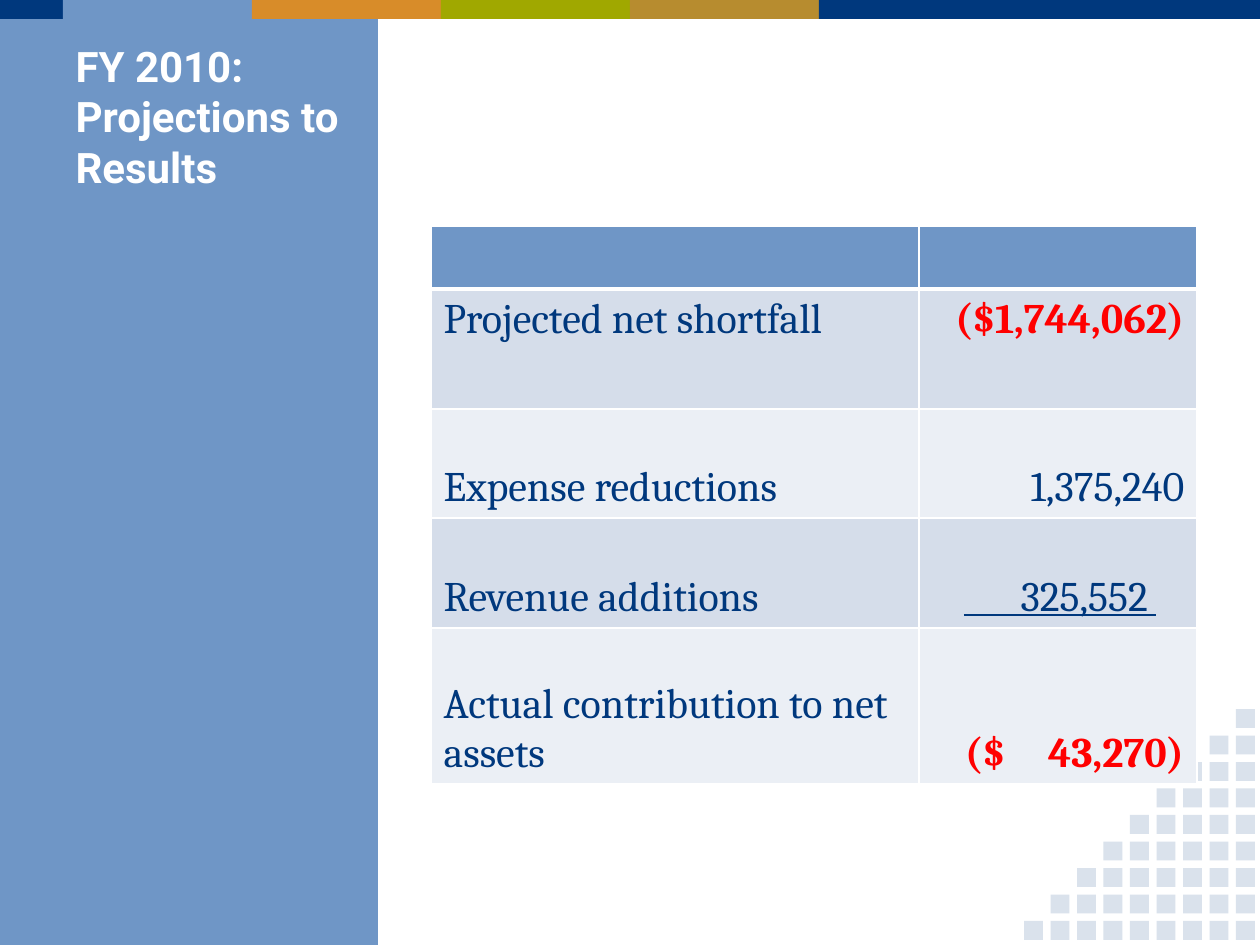
from itertools import accumulate

from lxml import etree
from pptx import Presentation
from pptx import util as u
from pptx.dml.color import RGBColor
from pptx.enum import shapes, text
from pptx.oxml.ns import qn

PX = u.Inches(1) / 126
COLORS = {
    "navy": "00387D", "blue": "6F96C6", "orange": "D88C29", "green": "A0A800",
    "gold": "B78C2F", "square": "DAE2EC", "band": "D5DDEA", "pale": "EBEFF5",
    "red": "FF0000", "white": "FFFFFF",
}
LEFT, RIGHT = text.PP_ALIGN.LEFT, text.PP_ALIGN.RIGHT
TOP, BOTTOM = text.MSO_ANCHOR.TOP, text.MSO_ANCHOR.BOTTOM


def px(length):
    """Turn px into EMU."""
    return u.Emu(round(length * PX))


def color(name):
    """Return the named colour."""
    return RGBColor.from_string(COLORS[name])


def add_rect(parent, box, fill):
    """Add a plain filled rectangle."""
    rect = parent.add_shape(shapes.MSO_SHAPE.RECTANGLE, *map(px, box))
    rect.shadow.inherit = False
    rect.fill.solid()
    rect.fill.fore_color.rgb = color(fill)
    rect.line.fill.background()


def write(frame, words, font="Cambria", ink="navy", bold=False, align=LEFT):
    """Write one formatted paragraph into a text frame."""
    para = frame.paragraphs[0]
    para.alignment = align
    span = para.add_run()
    span.text = words
    span.font.name = font
    span.font.size = u.Pt(24)
    span.font.bold = bold
    span.font.color.rgb = color(ink)
    return para


def add_squares(slide, box, count=9, size=19):
    """Fill the lower right half of a box with a grid of squares."""
    left, top, width, height = box
    group = slide.shapes.add_group_shape()
    for row in range(count):
        for column in range(count - 1 - row, count):
            x = left + column * (width - size) / (count - 1)
            y = top + row * (height - size) / (count - 1)
            add_rect(group.shapes, (x, y, size, size), "square")


def add_top_bar(slide, box):
    """Add the strip of coloured segments."""
    left, top, _, height = box
    segments = [("navy", 63), ("blue", 189), ("orange", 189),
                ("green", 189), ("gold", 189), ("navy", 441)]
    starts = accumulate((width for _, width in segments), initial=left)
    for x, (fill, width) in zip(starts, segments):
        add_rect(slide.shapes, (x, top, width, height), fill)


def place_title(slide, box, words):
    """Format the title and bring it in front of the sidebar."""
    title = slide.shapes.title
    title.left, title.top, title.width, title.height = map(px, box)
    frame = title.text_frame
    frame.word_wrap = True
    frame.auto_size = text.MSO_AUTO_SIZE.NONE
    frame.vertical_anchor = BOTTOM
    write(frame, words, font="Roboto", ink="white", bold=True)
    title.element.getparent().append(title.element)


def set_borders(cell, top, bottom):
    """Give a cell white borders with the given point widths."""
    props = cell._tc.get_or_add_tcPr()
    widths = {"lnL": 1, "lnR": 1, "lnT": top, "lnB": bottom}
    for place, (side, width) in enumerate(widths.items()):
        line = etree.Element(qn(f"a:{side}"), w=str(u.Pt(width)))
        fill = etree.SubElement(line, qn("a:solidFill"))
        etree.SubElement(fill, qn("a:srgbClr"), val=COLORS["white"])
        props.insert(place, line)


def add_tab(para, position):
    """Add a right-aligned tab stop to a paragraph."""
    stops = etree.SubElement(para._p.get_or_add_pPr(), qn("a:tabLst"))
    etree.SubElement(stops, qn("a:tab"), pos=str(px(position)), algn="r")


def add_results(slide, box):
    """Add the table of results with the rule above its total."""
    left, top, width, _ = box
    heights = (63, 120, 109, 110, 156)
    table = slide.shapes.add_table(len(heights), 2, *map(px, box)).table
    for column, size in zip(table.columns, (488, width - 488)):
        column.width = px(size)
    for row, height in zip(table.rows, heights):
        row.height = px(height)
    loss = {"ink": "red", "bold": True}
    content = [
        ("Projected net shortfall", "($1,744,062)", TOP, loss),
        ("Expense reductions", "1,375,240", BOTTOM, {}),
        ("Revenue additions", "325,552", BOTTOM, {}),
        ("Actual contribution to net assets", "($\t43,270)", BOTTOM, loss),
    ]
    for index, row in enumerate(table.rows):
        for cell in row.cells:
            cell.fill.solid()
            fill = ("pale", "band")[index % 2] if index else "blue"
            cell.fill.fore_color.rgb = color(fill)
            set_borders(cell, 3 if index == 1 else 1, 1 if index else 3)
    for index, (label, amount, anchor, style) in enumerate(content, 1):
        name, value = table.cell(index, 0), table.cell(index, 1)
        name.vertical_anchor = value.vertical_anchor = anchor
        write(name.text_frame, label)
        tabbed = "\t" in amount
        para = write(value.text_frame, amount, align=LEFT if tabbed else RIGHT, **style)
        if tabbed:
            value.margin_left, value.margin_right = px(46), px(6)
            add_tab(para, 219)
    table.cell(3, 1).margin_right = px(49)
    add_rule(slide, (left + 533, top + 389, 192))


def add_rule(slide, line):
    """Add a thin horizontal rule."""
    x, y, width = line
    rule = slide.shapes.add_connector(
        shapes.MSO_CONNECTOR.STRAIGHT, px(x), px(y), px(x + width), px(y))
    rule.line.color.rgb = color("navy")
    rule.line.width = u.Pt(1.25)
    etree.SubElement(rule.element.spPr, qn("a:effectLst"))


def main():
    """Build and save the deck."""
    deck = Presentation()
    deck.slide_width, deck.slide_height = px(1260), px(945)
    slide = deck.slides.add_slide(deck.slide_layouts[5])
    add_rect(slide.shapes, (0, 19, 378, 926), "blue")
    add_squares(slide, (1024, 709, 231, 231))
    add_top_bar(slide, (0, 0, 1260, 19))
    place_title(slide, (63, 38, 294, 160), "FY 2010: Projections to Results")
    add_results(slide, (431, 226, 766, 558))
    deck.save("out.pptx")


if __name__ == "__main__":
    main()
